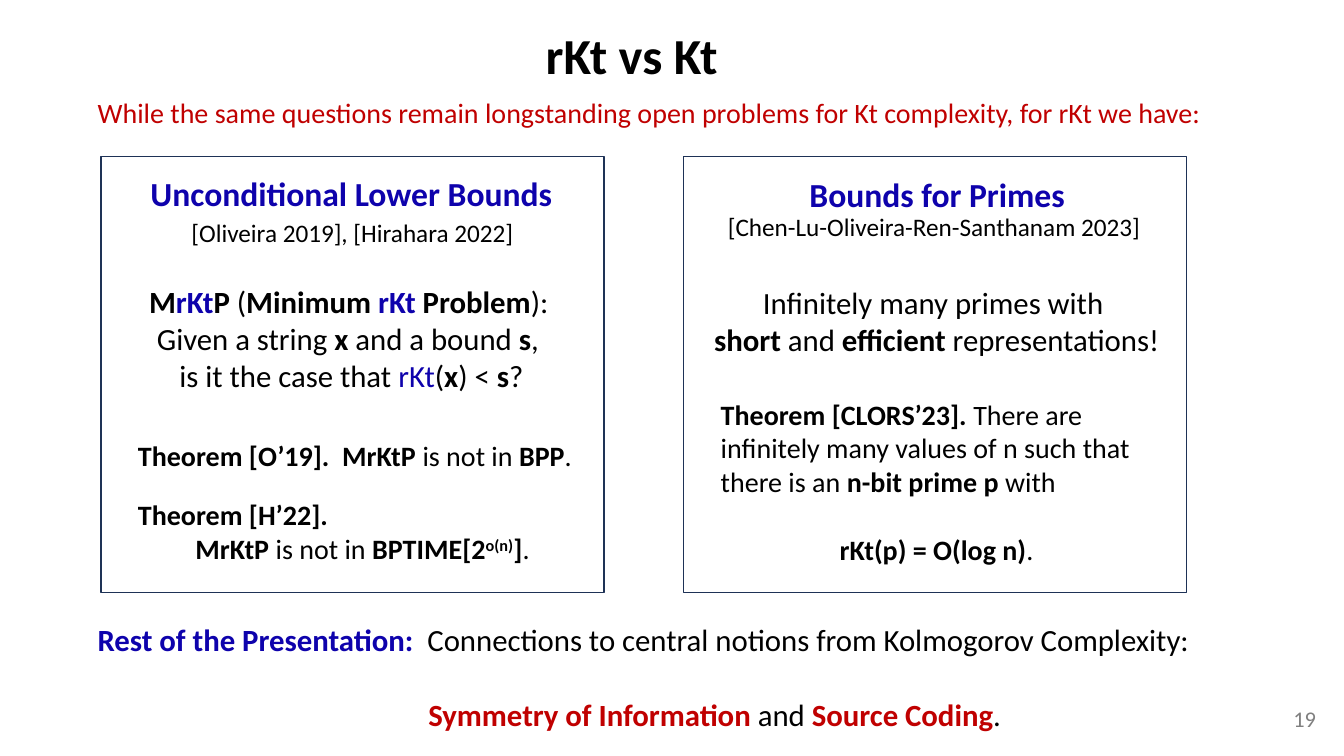
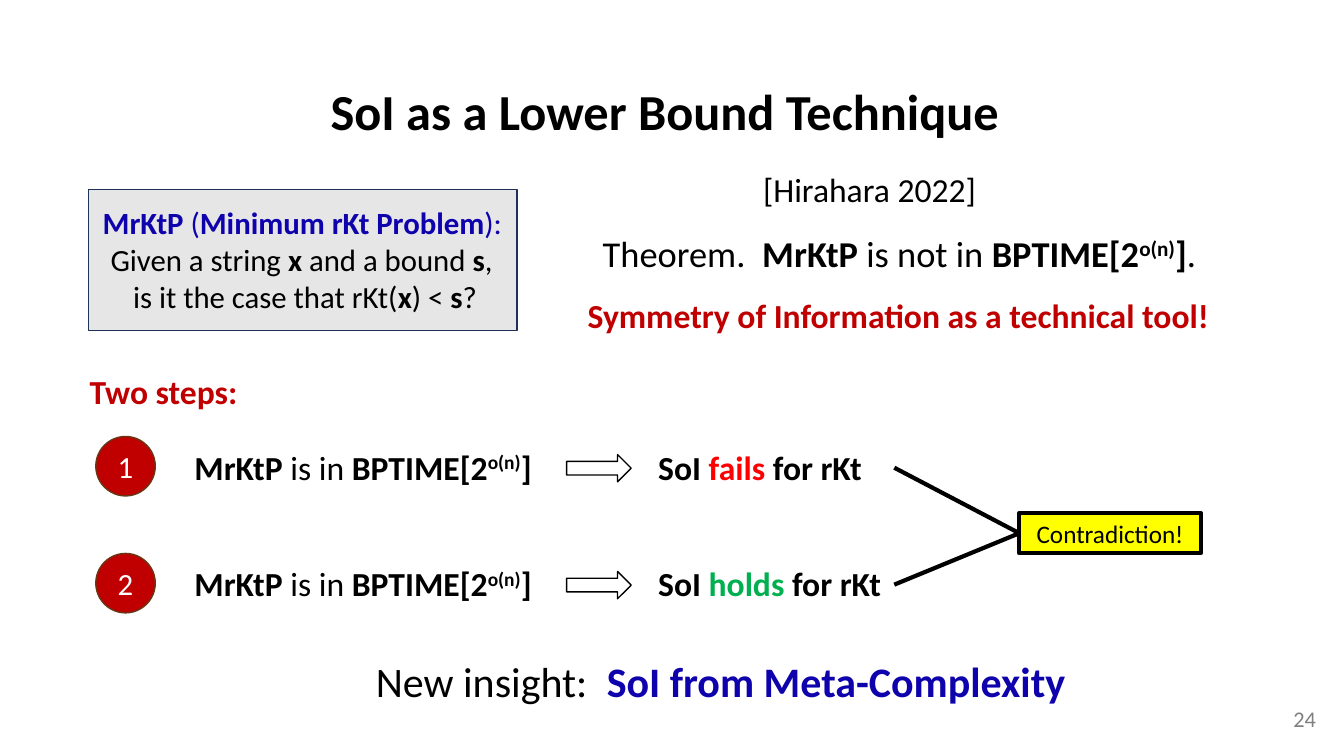
from lxml import etree
from pptx import Presentation
from pptx.dml.color import RGBColor
from pptx.enum import shapes, text
from pptx.oxml import ns
from pptx.util import Inches, Pt

COLORS = {
    "black": "000000", "white": "FFFFFF", "blue": "0E02AC", "crimson": "C00000",
    "red": "FF0000", "green": "00B050", "yellow": "FFFF00", "gray": "808080",
    "pale": "E7E6E6", "navy": "1E3256", "brown": "683715",
}
FONT = "Calibri"
LEFT, CENTER = text.PP_ALIGN.LEFT, text.PP_ALIGN.CENTER
SHAPE = shapes.MSO_SHAPE
BPTIME = [("BPTIME[2", "b"), ("o(n)", "b", "sup"), ("]", "b")]
STRING_AND_BOUND = ["Given a string ", ("x", "b"), " and a bound ", ("s", "b"), ", "]


def rgb(name):
    """Return the colour with the given name."""
    return RGBColor.from_string(COLORS[name])


def add_runs(paragraph, runs, color="black"):
    """Add runs, each a string or a tuple of wording and style words."""
    for item in runs:
        wording, *styles = [item] if isinstance(item, str) else item
        run = paragraph.add_run()
        run.text = wording
        run.font.bold = "b" in styles
        tints = [style for style in styles if style in COLORS]
        run.font.color.rgb = rgb(tints[0] if tints else color)
        if "sup" in styles:
            run.font._element.set("baseline", "30000")


def write(frame, lines, size, color="black", align=LEFT):
    """Fill a text frame with lines of runs and return its paragraphs."""
    frame.word_wrap = True
    for number, runs in enumerate(lines):
        paragraph = frame.paragraphs[0] if number == 0 else frame.add_paragraph()
        paragraph.font.name = FONT
        paragraph.font.size = Pt(size)
        paragraph.alignment = align
        add_runs(paragraph, runs, color)
    return frame.paragraphs


def label(slide, box, lines, size, color="black", align=LEFT):
    """Place a text box and return its paragraphs."""
    frame = slide.shapes.add_textbox(*map(Inches, box)).text_frame
    return write(frame, lines, size, color, align)


def offset(paragraph, indent, gap=0):
    """Indent a paragraph by inches and set the points before it."""
    paragraph._p.get_or_add_pPr().set("marL", str(Inches(indent)))
    paragraph.space_before = Pt(gap)


def figure(slide, preset, box, fill, line, weight=1):
    """Place a flat preset shape."""
    shape = slide.shapes.add_shape(preset, *map(Inches, box))
    shape.shadow.inherit = False
    shape.fill.solid()
    shape.fill.fore_color.rgb = rgb(fill)
    shape.line.color.rgb = rgb(line)
    shape.line.width = Pt(weight)
    return shape


def stroke(slide, start, end):
    """Draw a thick black line between two points."""
    line = slide.shapes.add_connector(
        shapes.MSO_CONNECTOR.STRAIGHT, *map(Inches, (*start, *end)))
    line.line.color.rgb = rgb("black")
    line.line.width = Pt(3)
    etree.SubElement(line._element.spPr, ns.qn("a:effectLst"))


def start_slide(deck, title, box, number):
    """Add a blank slide with its title and page number."""
    slide = deck.slides.add_slide(deck.slide_layouts[6])
    label(slide, box, [[(title, "b")]], 36, align=CENTER)
    label(slide, (12.72, 6.95, 0.44, 0.37), [[str(number)]], 16, "gray", CENTER)
    return slide


def problem(slide, left, top, heading, question):
    """Place the definition of the minimum problem."""
    paragraphs = label(slide, (left, top, 4.21, 1.21),
                       [heading, STRING_AND_BOUND, question], 22, align=CENTER)
    paragraphs[0].alignment = LEFT


def lower_bounds_panel(slide, left, top):
    """Build the panel on unconditional lower bounds."""
    figure(slide, SHAPE.RECTANGLE, (left, top, 4.99, 4.33), "white", "navy")
    label(slide, (left + 0.28, top + 0.12, 4.41, 0.5),
          [[("Unconditional Lower Bounds", "b")]], 24, "blue", CENTER)
    label(slide, (left + 0.8, top + 0.56, 3.54, 0.4),
          [["[Oliveira 2019], [Hirahara 2022]"]], 18)
    problem(slide, left + 0.38, top + 1.21,
            [("M", "b"), ("rKt", "b", "blue"), ("P", "b"), " (", ("Minimum ", "b"),
             ("rKt", "b", "blue"), (" Problem", "b"), "):"],
            ["is it the case that ", ("rKt", "blue"), "(", ("x", "b"), ") < ",
             ("s", "b"), "?"])
    label(slide, (left + 0.27, top + 2.75, 4.72, 0.44),
          [[("Theorem [O’19].  MrKtP", "b"), " is not in ", ("BPP", "b"), "."]], 20)
    theorem = label(slide, (left + 0.27, top + 3.34, 4.57, 0.77),
                    [[("Theorem [H’22].", "b")],
                     [("MrKtP", "b"), " is not in ", *BPTIME, "."]], 20)
    offset(theorem[1], 0.57)


def primes_panel(slide, left, top):
    """Build the panel on bounds for primes."""
    figure(slide, SHAPE.RECTANGLE, (left, top, 4.99, 4.33), "white", "navy")
    label(slide, (left + 0.87, top + 0.13, 3.29, 0.5),
          [[("Bounds for Primes", "b")]], 24, "blue", CENTER)
    label(slide, (left + 0.34, top + 0.5, 4.51, 0.4),
          [["[Chen-Lu-Oliveira-Ren-Santhanam 2023]"]], 18)
    label(slide, (left + 0.15, top + 1.22, 4.72, 0.84),
          [["Infinitely many primes with "],
           [("short", "b"), " and ", ("efficient", "b"), " representations!"]],
          22, align=CENTER)
    theorem = label(slide, (left + 0.27, top + 2.34, 4.79, 1.78),
                    [[("Theorem [CLORS’23]. ", "b"),
                      "There are infinitely many values of n such that there is an ",
                      ("n-bit prime p", "b"), " with"],
                     [("rKt(p) = O(log n)", "b"), "."]], 20)
    offset(theorem[1], 1.18, 24.4)


def comparison_slide(deck):
    """Build the slide that compares rKt with Kt."""
    slide = start_slide(deck, "rKt vs Kt", (0.42, 0.19, 11.69, 0.71), 19)
    label(slide, (0.87, 0.9, 11.24, 0.44),
          [["While the same questions remain longstanding open problems "
            "for Kt complexity, for rKt we have:"]], 20, "crimson")
    lower_bounds_panel(slide, 1, 1.55)
    primes_panel(slide, 6.78, 1.55)
    outlook = label(slide, (0.87, 6.11, 11.24, 1.21),
                    [[("Rest of the Presentation:  ", "b", "blue"),
                      "Connections to central notions from Kolmogorov Complexity:"],
                     [("Symmetry of Information", "b", "crimson"), " and ",
                      ("Source Coding", "b", "crimson"), "."]], 22)
    offset(outlook[1], 3.28, 26.8)


def problem_box(slide, left, top):
    """Build the shaded definition box."""
    figure(slide, SHAPE.RECTANGLE, (left, top, 4.25, 1.4), "pale", "navy")
    problem(slide, left + 0.04, top + 0.09,
            [("MrKtP", "b", "blue"), (" (", "blue"),
             ("Minimum rKt Problem", "b", "blue"), ("):", "blue")],
            ["is it the case that rKt(", ("x", "b"), ") < ", ("s", "b"), "?"])


def step(slide, left, top, number, verdict, tint):
    """Build one numbered step with its arrow and outcome."""
    badge = figure(slide, SHAPE.OVAL, (left, top, 0.59, 0.59), "crimson", "brown")
    write(badge.text_frame, [[str(number)]], 22, "white", CENTER)
    label(slide, (left + 0.88, top + 0.05, 3.76, 0.5),
          [[("MrKtP", "b"), " is in ", *BPTIME]], 24)
    figure(slide, SHAPE.RIGHT_ARROW, (left + 4.67, top + 0.18, 0.64, 0.27),
           "white", "black")
    label(slide, (left + 5.48, top + 0.05, 2.44, 0.5),
          [[("SoI ", "b"), (verdict, "b", tint), (" for rKt", "b")]], 24)


def steps(slide, left, top):
    """Build both steps and the contradiction they lead to."""
    meeting = (left + 9.16, top + 0.96)
    for index, (verdict, tint) in enumerate([("fails", "red"), ("holds", "green")]):
        row = top + 1.16 * index
        step(slide, left, row, index + 1, verdict, tint)
        stroke(slide, (left + 7.92, row + 0.31), meeting)
    contradiction = figure(slide, SHAPE.RECTANGLE,
                           (meeting[0], meeting[1] - 0.2, 1.8, 0.4),
                           "yellow", "black", 3)
    write(contradiction.text_frame, [["Contradiction!"]], 18, align=CENTER)


def technique_slide(deck):
    """Build the slide on SoI as a lower bound technique."""
    slide = start_slide(deck, "SoI as a Lower Bound Technique",
                        (0.42, 0.75, 12.35, 0.71), 24)
    problem_box(slide, 0.88, 1.88)
    label(slide, (7.47, 1.63, 2.44, 0.5), [["[Hirahara 2022]"]], 24)
    label(slide, (5.88, 2.24, 6.73, 0.54),
          [["Theorem.  ", ("MrKtP", "b"), " is not in ", *BPTIME, "."]], 26)
    label(slide, (5.73, 2.88, 6.73, 0.5),
          [[("Symmetry of Information as a technical tool!", "b")]], 24, "crimson")
    label(slide, (0.79, 3.63, 3.09, 0.5), [[("Two steps:", "b")]], 24, "crimson")
    steps(slide, 0.95, 4.33)
    label(slide, (3.63, 6.45, 7.33, 0.61),
          [["New insight:  ", ("SoI from Meta-Complexity", "b", "blue")]], 30)


def main():
    """Build and save the deck."""
    deck = Presentation()
    deck.slide_width, deck.slide_height = Inches(13.33), Inches(7.5)
    comparison_slide(deck)
    technique_slide(deck)
    deck.save("out.pptx")


if __name__ == "__main__":
    main()
